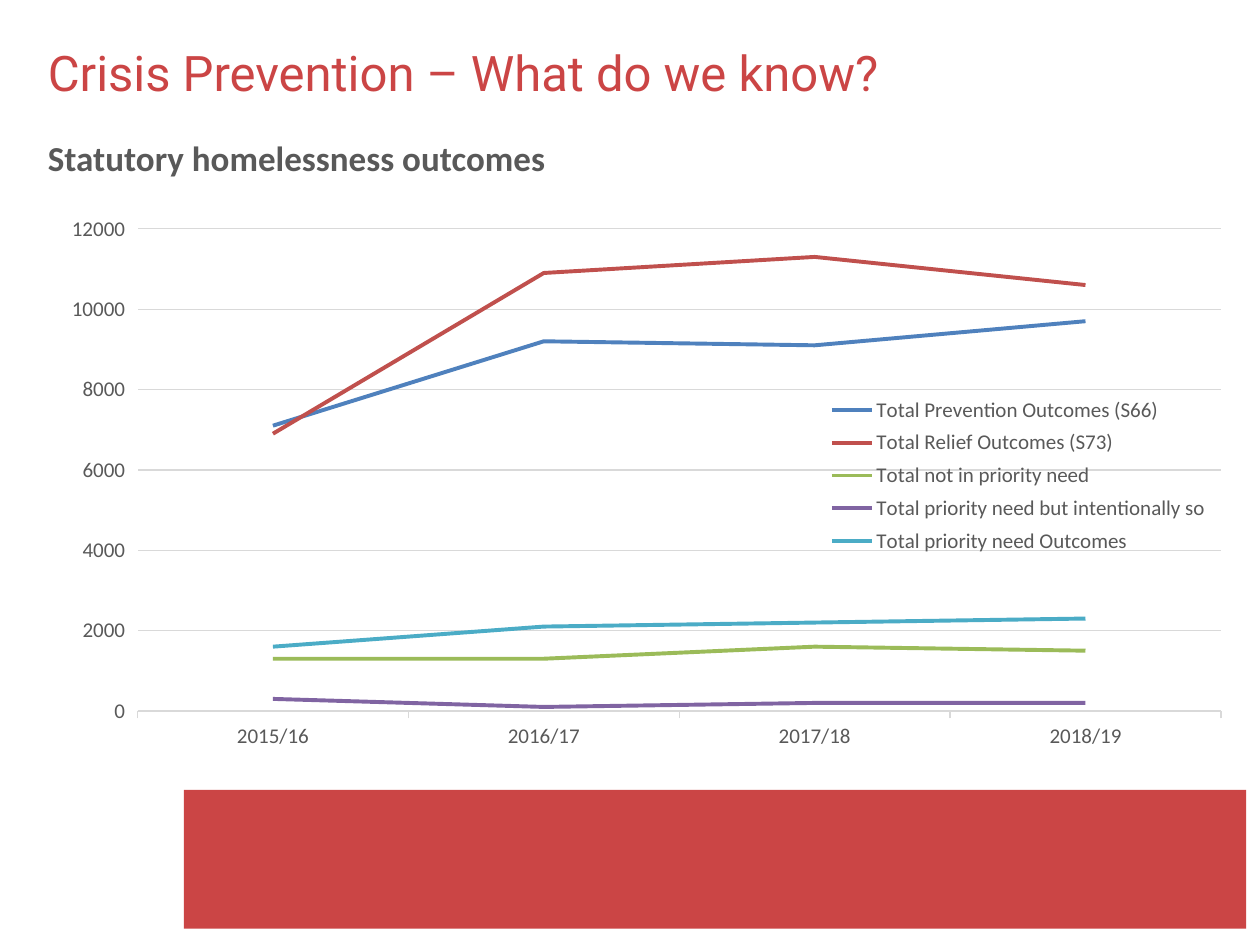
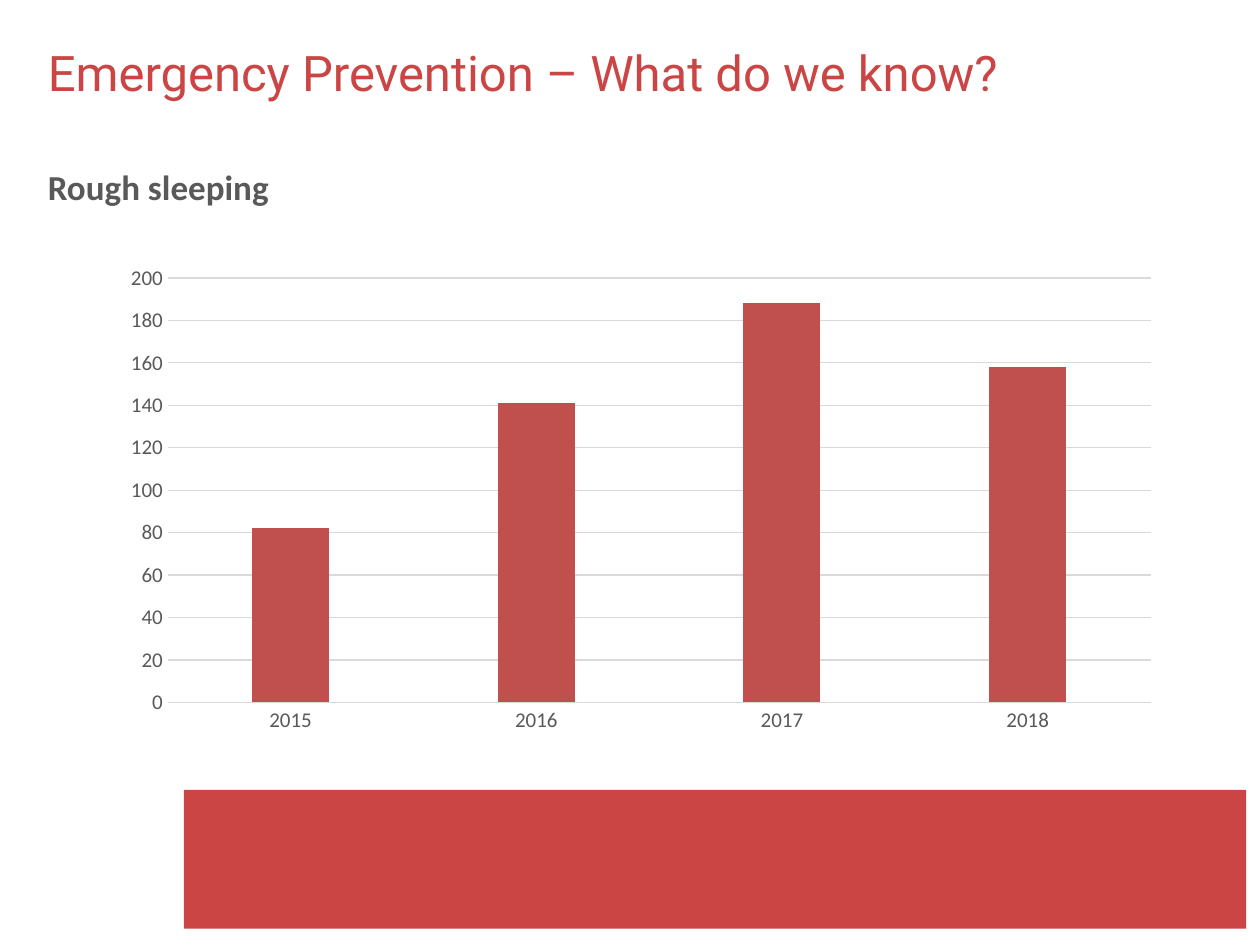
"""Build two slides on homelessness outcomes, each with a native chart."""
from dataclasses import dataclass

from lxml.etree import SubElement
from pptx import Presentation
from pptx.chart.data import CategoryChartData
from pptx.dml.color import RGBColor
from pptx.enum.chart import XL_CHART_TYPE as ChartType
from pptx.enum.chart import XL_LEGEND_POSITION as LegendPosition
from pptx.enum.chart import XL_TICK_MARK as TickMark
from pptx.enum.shapes import MSO_SHAPE as Shape
from pptx.enum.text import MSO_ANCHOR as Anchor
from pptx.enum.text import MSO_AUTO_SIZE as AutoSize
from pptx.enum.text import PP_ALIGN as Align
from pptx.oxml import parse_xml
from pptx.oxml.ns import nsdecls, qn
from pptx.util import Inches, Pt


@dataclass(frozen=True)
class Theme:
    """Colours, fonts and type sizes of the deck."""
    brand: str = "CB4545"
    ink: str = "595959"
    rule: str = "D9D9D9"
    blue: str = "4F81BD"
    red: str = "C0504D"
    green: str = "9BBB59"
    purple: str = "8064A2"
    teal: str = "4BACC6"
    title_font: str = "Roboto"
    body_font: str = "Calibri"
    title_size: int = 28
    heading_size: int = 20
    label_size: int = 12


THEME = Theme()
TITLE_BOX = (0.28, 0.29, 9.45, 0.57)
BAND_BOX = (1.46, 6.27, 8.43, 1.1)

SLIDES = [
    {
        "title": "Crisis Prevention – What do we know?",
        "heading": "Statutory homelessness outcomes",
        "heading_top": 1.03,
        "chart_type": ChartType.LINE,
        "chart_box": (0.43, 1.64, 9.45, 4.4),
        "scale": (12000, 2000),
        "categories": ["2015/16", "2016/17", "2017/18", "2018/19"],
        "series": [
            ("Total Prevention Outcomes (S66)", THEME.blue, (7100, 9200, 9100, 9700)),
            ("Total Relief Outcomes (S73)", THEME.red, (6900, 10900, 11300, 10600)),
            ("Total not in priority need", THEME.green, (1300, 1300, 1600, 1500)),
            ("Total priority need but intentionally so", THEME.purple, (300, 100, 200, 200)),
            ("Total priority need Outcomes", THEME.teal, (1600, 2100, 2200, 2300)),
        ],
    },
    {
        "title": "Emergency Prevention – What do we know?",
        "heading": "Rough sleeping",
        "heading_top": 1.26,
        "chart_type": ChartType.COLUMN_CLUSTERED,
        "chart_box": (0.87, 2.03, 8.43, 3.86),
        "scale": (200, 20),
        "categories": ["2015", "2016", "2017", "2018"],
        "series": [("Series 1", THEME.red, (82, 141, 188, 158))],
    },
]


def rgb(color):
    return RGBColor.from_string(color)


def style_font(font, name, size, color, bold=False):
    font.name, font.size, font.bold = name, Pt(size), bold
    font.color.rgb = rgb(color)


def place(shape, box):
    shape.left, shape.top, shape.width, shape.height = map(Inches, box)


def fill_placeholder(holder, box, text):
    place(holder, box)
    frame = holder.text_frame
    frame.text = text
    frame.auto_size = AutoSize.NONE
    frame.vertical_anchor = Anchor.TOP
    para = frame.paragraphs[0]
    para.alignment = Align.LEFT
    para.space_before = Pt(0)
    return para


def add_heading(holder, text, top):
    para = fill_placeholder(holder, (0.28, top, 9.61, 0.44), text)
    para.line_spacing, para.space_after = Pt(24), Pt(12)
    properties = para._p.get_or_add_pPr()
    properties.set("marL", "0")
    properties.set("indent", "0")
    SubElement(properties, qn("a:buNone"))
    style_font(para.font, THEME.body_font, THEME.heading_size, THEME.ink, True)


def add_band(page):
    band = page.shapes.add_shape(Shape.RECTANGLE, *map(Inches, BAND_BOX))
    band.shadow.inherit = False
    band.fill.solid()
    band.fill.fore_color.rgb = rgb(THEME.brand)
    band.line.fill.background()


def manual_layout(x, y, width, height, inner=False):
    target = '<c:layoutTarget val="inner"/>' if inner else ""
    return parse_xml(
        f'<c:layout {nsdecls("c")}><c:manualLayout>{target}'
        '<c:xMode val="edge"/><c:yMode val="edge"/>'
        f'<c:x val="{x}"/><c:y val="{y}"/><c:w val="{width}"/><c:h val="{height}"/>'
        "</c:manualLayout></c:layout>"
    )


def set_layout(element, layout, index):
    for old in element.findall(qn("c:layout")):
        element.remove(old)
    element.insert(index, layout)


def style_axes(chart, scale, tick):
    value_axis, category_axis = chart.value_axis, chart.category_axis
    for axis in (value_axis, category_axis):
        axis.major_tick_mark = tick
        axis.minor_tick_mark = TickMark.NONE
        style_font(axis.tick_labels.font, THEME.body_font, THEME.label_size, THEME.ink)
    value_axis.minimum_scale = 0
    value_axis.maximum_scale, value_axis.major_unit = scale
    value_axis.format.line.fill.background()
    value_axis.has_major_gridlines = True
    for line in (category_axis.format.line, value_axis.major_gridlines.format.line):
        line.color.rgb = rgb(THEME.rule)
        line.width = Pt(0.75)


def style_lines(chart, colors):
    for series, color in zip(chart.plots[0].series, colors):
        series.smooth = False
        series.format.line.color.rgb = rgb(color)
        series.format.line.width = Pt(2.25)
    chart.has_legend = True
    legend = chart.legend
    legend.position = LegendPosition.RIGHT
    legend.include_in_layout = False
    style_font(legend.font, THEME.body_font, THEME.label_size, THEME.ink)
    set_layout(legend._element, manual_layout(0.64, 0.33, 0.34, 0.31), 1)
    plot_area = chart._chartSpace.chart.plotArea
    set_layout(plot_area, manual_layout(0.07, 0.04, 0.91, 0.87, inner=True), 0)


def style_columns(chart, colors):
    plot = chart.plots[0]
    plot.gap_width, plot.overlap = 219, -27
    chart.has_legend = False
    for series, color in zip(plot.series, colors):
        series.format.fill.solid()
        series.format.fill.fore_color.rgb = rgb(color)


def add_chart(page, content):
    data = CategoryChartData()
    data.categories = content["categories"]
    for name, _, values in content["series"]:
        data.add_series(name, values)
    box = map(Inches, content["chart_box"])
    chart = page.shapes.add_chart(content["chart_type"], *box, data).chart
    chart.has_title = False
    chart.font.name, chart.font.size = THEME.body_font, Pt(10)
    chart.plots[0].vary_by_categories = False
    colors = [color for _, color, _ in content["series"]]
    is_line = content["chart_type"] == ChartType.LINE
    style_axes(chart, content["scale"], TickMark.OUTSIDE if is_line else TickMark.NONE)
    (style_lines if is_line else style_columns)(chart, colors)


def add_page(deck, content):
    page = deck.slides.add_slide(deck.slide_layouts[1])
    title = fill_placeholder(page.shapes.title, TITLE_BOX, content["title"])
    style_font(title.font, THEME.title_font, THEME.title_size, THEME.brand)
    add_heading(page.placeholders[1], content["heading"], content["heading_top"])
    add_band(page)
    add_chart(page, content)


def main():
    deck = Presentation()
    deck.slide_width, deck.slide_height = Inches(10), Inches(7.5)
    for content in SLIDES:
        add_page(deck, content)
    deck.save("out.pptx")


if __name__ == "__main__":
    main()
